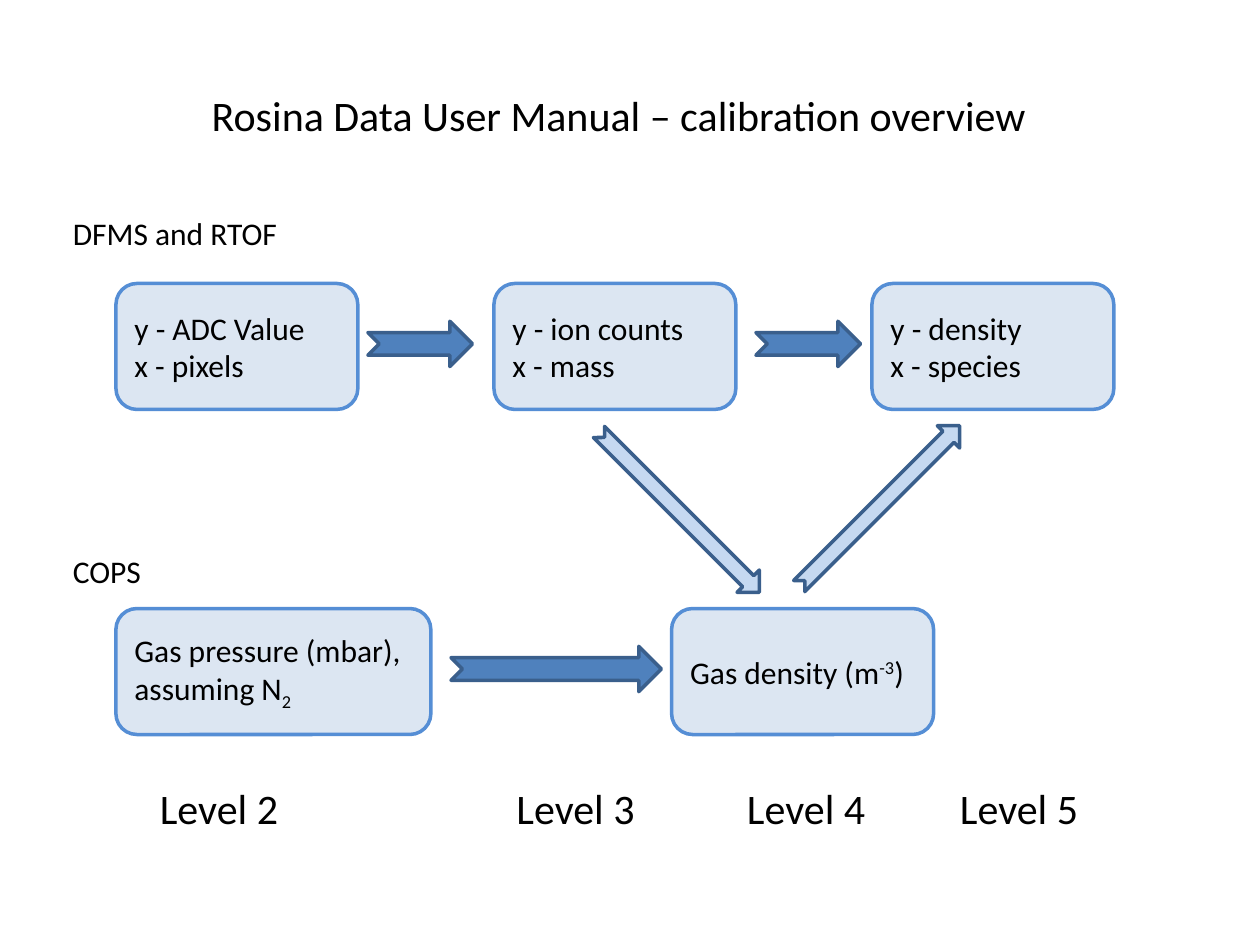
from dataclasses import dataclass

from lxml import etree
from pptx import Presentation
from pptx.dml.color import RGBColor
from pptx.enum import shapes, text
from pptx.oxml.ns import qn
from pptx.util import Inches, Pt

COLORS = {
    "text": "000000",
    "box": "DCE6F2",
    "box_line": "558ED5",
    "arrow": "4F81BD",
    "arrow_light": "C6D9F1",
    "arrow_line": "3A5F8C",
}
FONT = "Calibri"
HANGING = 0.29
BOX_HEIGHT = 1.0


@dataclass
class Box:
    left: float
    top: float
    width: float
    lines: list  # each line is a list of (text, baseline percent) pairs
    hanging: bool = True


@dataclass
class Arrow:
    left: float
    top: float
    width: float
    height: float = 0.36
    rotation: float = 0
    fill: str = "arrow"


@dataclass
class Label:
    text: str
    left: float
    top: float
    width: float
    height: float
    size: int


def rgb(name: str) -> RGBColor:
    return RGBColor.from_string(COLORS[name])


def format_run(r, size: int) -> None:
    r.font.name = FONT
    r.font.size = Pt(size)
    r.font.color.rgb = rgb("text")


def add_preset(slide, kind, left, top, width, height, fill: str, line: str):
    sp = slide.shapes.add_shape(
        kind, Inches(left), Inches(top), Inches(width), Inches(height))
    sp.shadow.inherit = False
    sp.fill.solid()
    sp.fill.fore_color.rgb = rgb(fill)
    sp.line.color.rgb = rgb(line)
    sp.line.width = Pt(2)
    return sp


def add_box(slide, box: Box) -> None:
    sp = add_preset(slide, shapes.MSO_SHAPE.ROUNDED_RECTANGLE, box.left, box.top,
                    box.width, BOX_HEIGHT, "box", "box_line")
    tf = sp.text_frame
    tf.word_wrap = True
    tf.vertical_anchor = text.MSO_ANCHOR.MIDDLE
    for i, line in enumerate(box.lines):
        p = tf.add_paragraph() if i else tf.paragraphs[0]
        p.alignment = text.PP_ALIGN.LEFT
        if box.hanging:
            pPr = p._p.get_or_add_pPr()
            pPr.set("marL", str(Inches(HANGING)))
            pPr.set("indent", str(-Inches(HANGING)))
            etree.SubElement(pPr, qn("a:buNone"))
        for words, baseline in line:
            r = p.add_run()
            r.text = words
            format_run(r, 18)
            if baseline:
                r._r.get_or_add_rPr().set("baseline", str(baseline * 1000))


def add_arrow(slide, arrow: Arrow) -> None:
    sp = add_preset(slide, shapes.MSO_SHAPE.NOTCHED_RIGHT_ARROW, arrow.left, arrow.top,
                    arrow.width, arrow.height, arrow.fill, "arrow_line")
    sp.rotation = arrow.rotation


def fill_label(sp, label: Label) -> None:
    sp.left, sp.top = Inches(label.left), Inches(label.top)
    sp.width, sp.height = Inches(label.width), Inches(label.height)
    tf = sp.text_frame
    tf.text = label.text
    tf.word_wrap = False
    tf.auto_size = text.MSO_AUTO_SIZE.SHAPE_TO_FIT_TEXT
    tf.vertical_anchor = text.MSO_ANCHOR.TOP
    p = tf.paragraphs[0]
    p.alignment = text.PP_ALIGN.LEFT
    format_run(p.runs[0], label.size)


def add_label(slide, label: Label) -> None:
    fill_label(slide.shapes.add_textbox(0, 0, 0, 0), label)


def main() -> None:
    prs = Presentation()
    prs.slide_width, prs.slide_height = Inches(10), Inches(7.5)
    s = prs.slides.add_slide(prs.slide_layouts[5])

    # Title
    fill_label(s.shapes.title, Label("Rosina Data User Manual – calibration overview",
                                     1.58, 0.66, 6.72, 0.5, 24))

    # DFMS and RTOF row: three boxes at an equal pitch
    add_label(s, Label("DFMS and RTOF", 0.48, 1.65, 1.84, 0.4, 18))
    axes = [("ADC Value", "pixels"), ("ion counts", "mass"), ("density", "species")]
    for i, (y, x) in enumerate(axes):
        add_box(s, Box(0.92 + 3 * i, 2.25, 1.92,
                       [[(f"y - {y}", 0)], [(f"x - {x}", 0)]]))

    # COPS row
    add_label(s, Label("COPS", 0.48, 4.33, 0.75, 0.4, 18))
    add_box(s, Box(0.92, 4.83, 2.5,
                   [[("Gas pressure (mbar), assuming N", 0), ("2", -25)]], hanging=False))
    add_box(s, Box(5.33, 4.83, 2.08,
                   [[("Gas density (m", 0), ("-3", 30), (")", 0)]]))

    # Arrows along the rows, then the diagonals between them
    for arrow in (
        Arrow(2.92, 2.55, 0.83),
        Arrow(6, 2.55, 0.83),
        Arrow(3.58, 5.13, 1.67),
        Arrow(4.49, 3.94, 1.8, 0.25, 45, "arrow_light"),
        Arrow(6.08, 3.89, 1.8, 0.25, 315, "arrow_light"),
    ):
        add_arrow(s, arrow)

    # Data levels
    for level, left in enumerate((1.17, 4, 5.83, 7.52), start=2):
        add_label(s, Label(f"Level {level}", left, 6.16, 1.15, 0.5, 24))

    prs.save("out.pptx")


if __name__ == "__main__":
    main()
